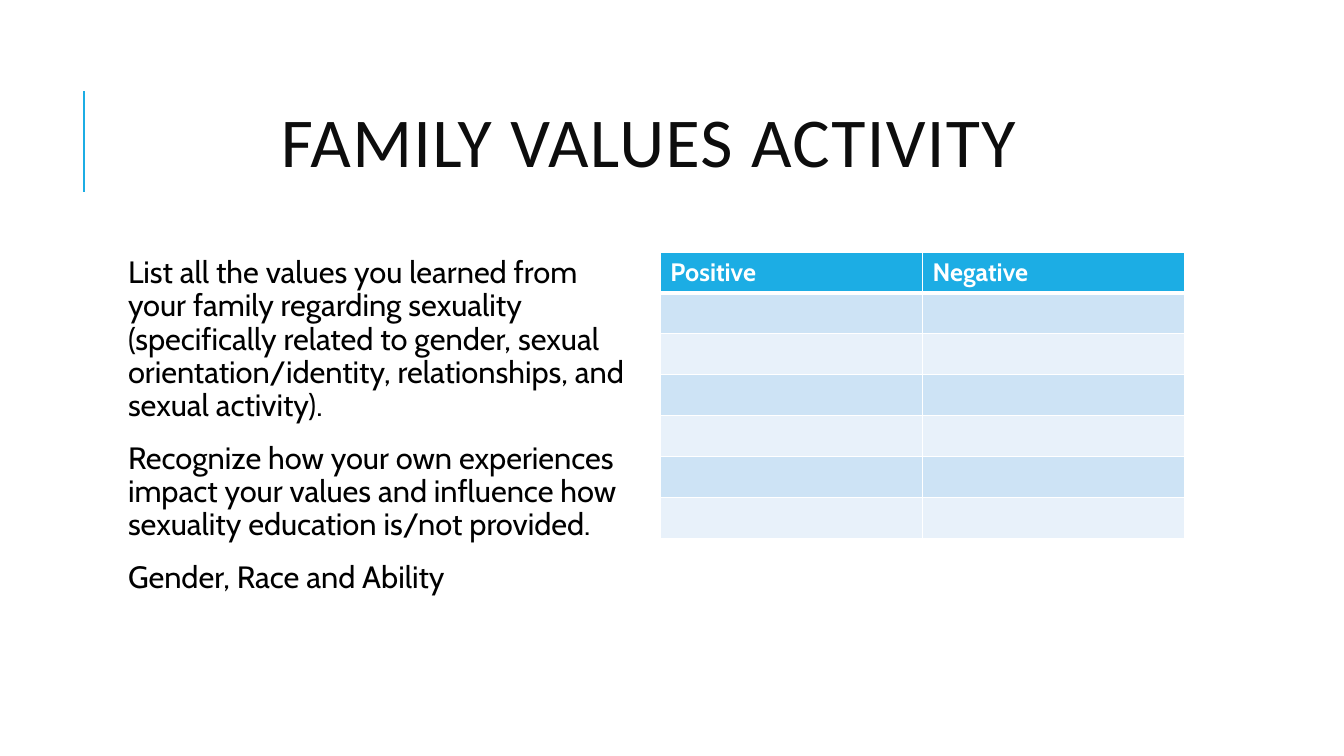
from lxml import etree
from pptx import Presentation
from pptx.dml.color import RGBColor
from pptx.enum import shapes, text
from pptx.oxml import ns
from pptx.util import Inches, Pt

TITLE = "FAMILY VALUES ACTIVITY"
PROMPTS = [
    "List all the values you learned from your family regarding sexuality "
    "(specifically related to gender, sexual orientation/identity, "
    "relationships, and sexual activity).",
    "Recognize how your own experiences impact your values and influence how "
    "sexuality education is/not provided.",
    "Gender, Race and Ability",
]
HEADINGS = ["Positive", "Negative"]
BLANK_ROWS = 6
COLORS = {
    "accent": "1CADE4", "title": "0D0D0D", "body": "000000",
    "white": "FFFFFF", "dark band": "CDE3F5", "light band": "E8F1FA",
}
LEFT, CONTENT_TOP, COLUMN_WIDTH, TABLE_LEFT = 1.12, 2.5, 5.2, 6.55
TABLE_HEIGHT = 2.84


def color(name):
    return RGBColor.from_string(COLORS[name])


def add_run(para, words, font, size, color_name, bold=False):
    span = para.add_run()
    span.text = words
    span.font.name = font
    span.font.size = Pt(size)
    span.font.bold = bold
    span.font.color.rgb = color(color_name)
    return span


def set_borders(cell, bottom_width):
    """Outline a cell in white; the borders must precede its fill."""
    props = cell._tc.get_or_add_tcPr()
    widths = {"lnL": 1, "lnR": 1, "lnT": 1, "lnB": bottom_width}
    for place, (side, width) in enumerate(widths.items()):
        border = etree.Element(ns.qn(f"a:{side}"), w=str(Pt(width)))
        fill = etree.SubElement(border, ns.qn("a:solidFill"))
        etree.SubElement(fill, ns.qn("a:srgbClr"), val=COLORS["white"])
        props.insert(place, border)


def add_title(page):
    title = page.shapes.title
    title.left, title.top = Inches(LEFT), Inches(0.64)
    title.width, title.height = Inches(10.63), Inches(1.64)
    frame = title.text_frame
    frame.auto_size = text.MSO_AUTO_SIZE.NONE
    frame.vertical_anchor = text.MSO_ANCHOR.MIDDLE
    para = frame.paragraphs[0]
    para.alignment = text.PP_ALIGN.CENTER
    para.line_spacing = 0.8
    span = add_run(para, TITLE, "Calibri", 50, "title")
    span.font._element.set("spc", "100")


def add_accent_line(page):
    line = page.shapes.add_connector(
        shapes.MSO_CONNECTOR.STRAIGHT,
        Inches(0.83), Inches(1.9), Inches(0.83), Inches(0.9))
    line.line.color.rgb = color("accent")
    line.line.width = Pt(1.5)
    etree.SubElement(line._element.spPr, ns.qn("a:effectLst"))


def add_prompts(page):
    box = page.shapes.add_textbox(
        Inches(LEFT), Inches(CONTENT_TOP), Inches(COLUMN_WIDTH), Inches(4.4))
    frame = box.text_frame
    frame.word_wrap = True
    frame.margin_left = Inches(0.15)
    frame.margin_right = frame.margin_top = frame.margin_bottom = Inches(0.05)
    for index, prompt in enumerate(PROMPTS):
        para = frame.add_paragraph() if index else frame.paragraphs[0]
        para.line_spacing = 0.9
        para.space_before, para.space_after = Pt(12), Pt(2)
        add_run(para, prompt, "Cabin", 22, "body")


def add_values_table(page):
    row_count = BLANK_ROWS + 1
    table = page.shapes.add_table(
        row_count, len(HEADINGS), Inches(TABLE_LEFT), Inches(CONTENT_TOP),
        Inches(COLUMN_WIDTH), Inches(TABLE_HEIGHT)).table
    for row in range(row_count):
        if row == 0:
            band = "accent"
        else:
            band = "dark band" if row % 2 else "light band"
        for column, heading in enumerate(HEADINGS):
            cell = table.cell(row, column)
            cell.fill.solid()
            cell.fill.fore_color.rgb = color(band)
            set_borders(cell, 1 if row else 3)
            if row == 0:
                add_run(cell.text_frame.paragraphs[0], heading,
                        "Cabin", 18, "white", bold=True)


def main():
    deck = Presentation()
    deck.slide_width, deck.slide_height = Inches(13.33), Inches(7.5)
    page = deck.slides.add_slide(deck.slide_layouts[5])
    add_accent_line(page)
    add_title(page)
    add_prompts(page)
    add_values_table(page)
    deck.save("out.pptx")


if __name__ == "__main__":
    main()
